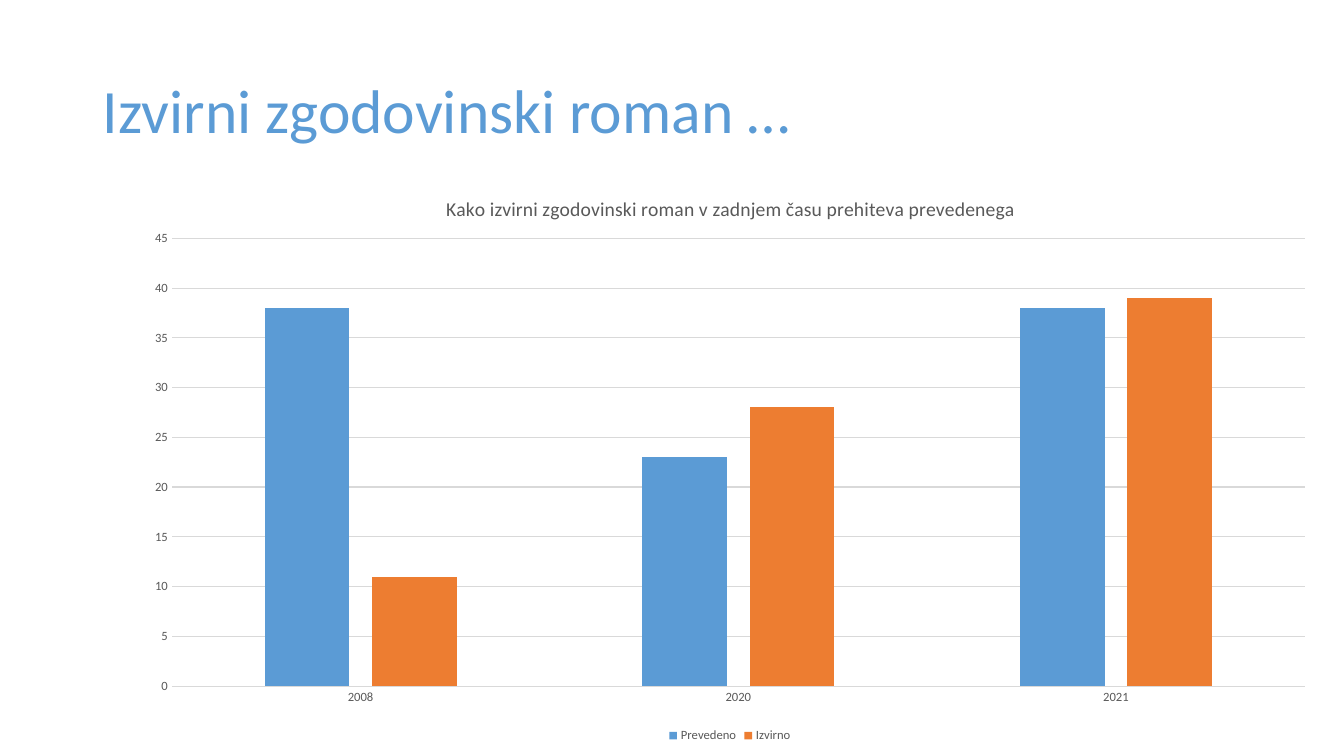
from dataclasses import dataclass

from lxml import etree
from pptx import Presentation
from pptx.chart.data import CategoryChartData
from pptx.dml.color import RGBColor
from pptx.enum.chart import XL_CHART_TYPE as ChartType
from pptx.enum.chart import XL_LEGEND_POSITION as LegendPosition
from pptx.enum.chart import XL_TICK_MARK as TickMark
from pptx.enum.text import MSO_ANCHOR as Anchor
from pptx.oxml.ns import qn
from pptx.util import Inches, Pt


@dataclass(frozen=True)
class Theme:
    font: str = "Calibri"
    blue: str = "5B9BD5"
    orange: str = "ED7D31"
    text: str = "595959"
    grid: str = "D9D9D9"
    heading_size: int = 44
    chart_title_size: int = 14
    label_size: int = 9
    line_width: float = 0.75


THEME = Theme()


def style_font(font, size, color):
    font.name = THEME.font
    font.size = Pt(size)
    font.bold = False
    font.color.rgb = RGBColor.from_string(color)


def style_line(line):
    line.color.rgb = RGBColor.from_string(THEME.grid)
    line.width = Pt(THEME.line_width)


def set_layout(element, index, **settings):
    for layout in element.findall(qn("c:layout")):
        element.remove(layout)
    layout = etree.Element(qn("c:layout"))
    manual = etree.SubElement(layout, qn("c:manualLayout"))
    for name, value in settings.items():
        etree.SubElement(manual, qn(f"c:{name}")).set("val", str(value))
    element.insert(index, layout)


def add_heading(slide, left, top, width, height):
    shape = slide.shapes.add_textbox(*map(Inches, (left, top, width, height)))
    text_frame = shape.text_frame
    text_frame.word_wrap = True
    text_frame.vertical_anchor = Anchor.MIDDLE
    text_frame.text = "Izvirni zgodovinski roman …"
    paragraph = text_frame.paragraphs[0]
    paragraph.line_spacing = 0.9
    style_font(paragraph.runs[0].font, THEME.heading_size, THEME.blue)


def style_axes(chart):
    for axis in (chart.category_axis, chart.value_axis):
        axis.major_tick_mark = TickMark.NONE
        axis.minor_tick_mark = TickMark.NONE
        style_font(axis.tick_labels.font, THEME.label_size, THEME.text)
    style_line(chart.category_axis.format.line)
    chart.value_axis.format.line.fill.background()
    style_line(chart.value_axis.major_gridlines.format.line)
    chart.value_axis.minimum_scale = 0
    chart.value_axis.maximum_scale = 45
    chart.value_axis.major_unit = 5


def style_chart_title(chart):
    text_frame = chart.chart_title.text_frame
    text_frame.text = "Kako izvirni zgodovinski roman v zadnjem času prehiteva prevedenega"
    style_font(text_frame.paragraphs[0].runs[0].font, THEME.chart_title_size, THEME.text)
    set_layout(chart.chart_title._element, 1, xMode="edge", yMode="edge", x=0.26, y=0.04)


def add_novel_chart(slide, left, top, width, height):
    data = CategoryChartData()
    data.categories = ["2008", "2020", "2021"]
    data.add_series("Prevedeno", (38, 23, 38))
    data.add_series("Izvirno", (11, 28, 39))
    box = map(Inches, (left, top, width, height))
    chart = slide.shapes.add_chart(ChartType.COLUMN_CLUSTERED, *box, data).chart
    chart.font.name = THEME.font

    plot = chart.plots[0]
    plot.gap_width = 219
    plot.overlap = -27
    plot.vary_by_categories = False
    for series, color in zip(plot.series, (THEME.blue, THEME.orange)):
        series.format.fill.solid()
        series.format.fill.fore_color.rgb = RGBColor.from_string(color)

    style_axes(chart)
    style_chart_title(chart)
    chart.has_legend = True
    chart.legend.position = LegendPosition.BOTTOM
    chart.legend.include_in_layout = False
    style_font(chart.legend.font, THEME.label_size, THEME.text)
    plot_area = chart._chartSpace.find(f".//{qn('c:plotArea')}")
    set_layout(plot_area, 0, layoutTarget="inner", xMode="edge", yMode="edge",
               x=0.034, y=0.121, w=0.946, h=0.774)


def main():
    presentation = Presentation()
    presentation.slide_width = Inches(13.33)
    presentation.slide_height = Inches(7.5)
    slide = presentation.slides.add_slide(presentation.slide_layouts[6])
    add_heading(slide, 0.92, 0.4, 11.5, 1.45)
    add_novel_chart(slide, 1.3, 1.67, 11.88, 5.74)
    presentation.save("out.pptx")


if __name__ == "__main__":
    main()
